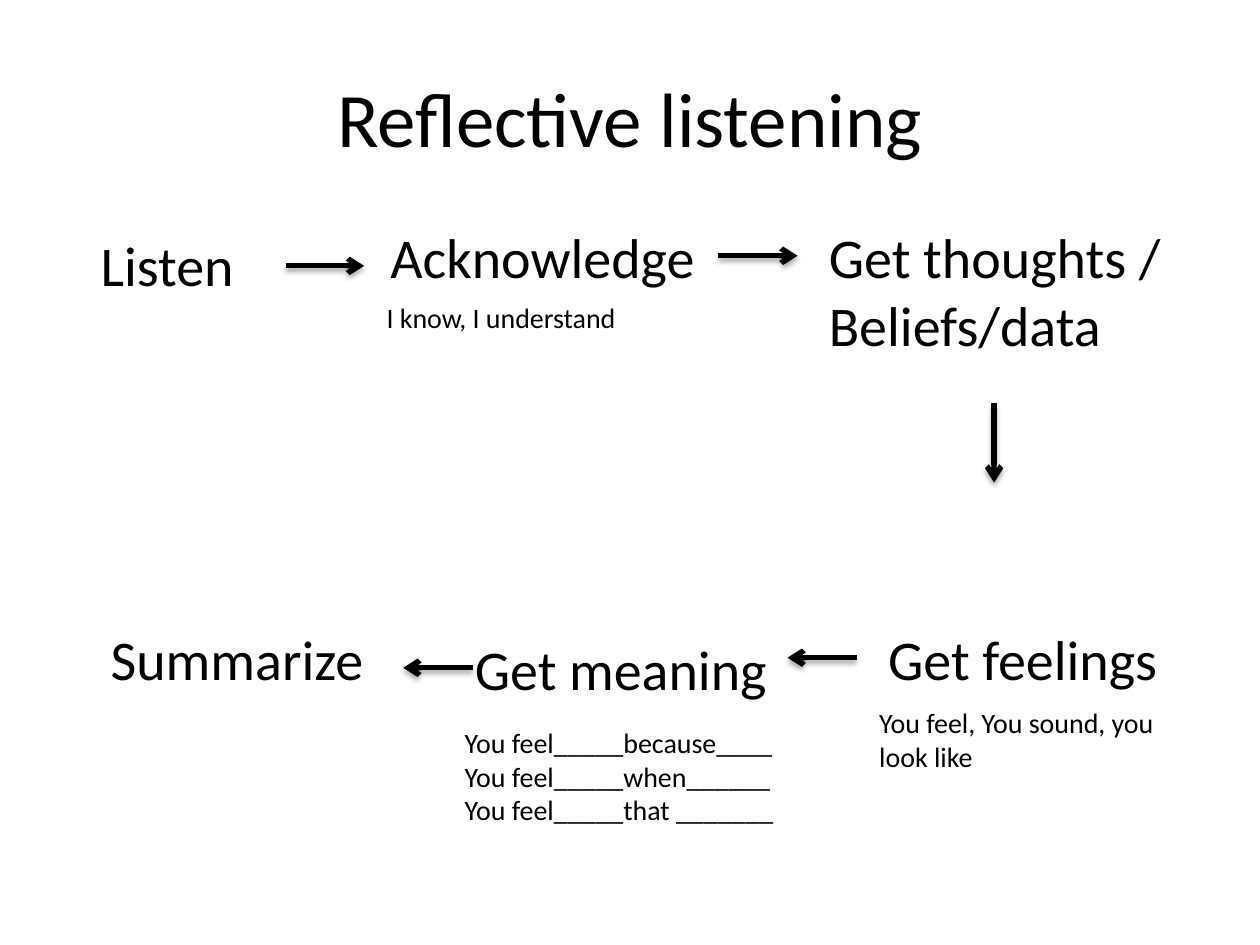
from lxml import etree
from pptx import Presentation
from pptx.dml.color import RGBColor
from pptx.enum.shapes import MSO_CONNECTOR as CONN
from pptx.enum.text import MSO_ANCHOR as ANCHOR, MSO_AUTO_SIZE as AUTO, PP_ALIGN as ALIGN
from pptx.oxml import parse_xml
from pptx.oxml.ns import nsdecls, qn
from pptx.util import Inches, Pt

BLACK = RGBColor(0x00, 0x00, 0x00)
SHADOW = (
    f'<a:effectLst {nsdecls("a")}>'
    '<a:outerShdw blurRad="40000" dist="23000" dir="5400000" rotWithShape="0">'
    f'<a:srgbClr val="{BLACK}"><a:alpha val="35000"/></a:srgbClr>'
    '</a:outerShdw></a:effectLst>'
)


class Deck:
    font = "Calibri"
    color = BLACK
    title_size, step_size, note_size = Pt(44), Pt(32), Pt(16)
    arrow_width = Pt(3)

    def __init__(self, width, height):
        self.prs = Presentation()
        self.prs.slide_width, self.prs.slide_height = Inches(width), Inches(height)
        self.s = self.prs.slides.add_slide(self.prs.slide_layouts[6])

    def text(self, text, box, size, wrap=True, align=ALIGN.LEFT):
        sp = self.s.shapes.add_textbox(*map(Inches, box))
        tf = sp.text_frame
        tf.text = text
        tf.word_wrap = wrap
        for p in tf.paragraphs:
            p.alignment = align
            for r in p.runs:
                r.font.name, r.font.size = self.font, size
                r.font.color.rgb = self.color
        return tf

    def title(self, text, *box):
        tf = self.text(text, box, self.title_size, align=ALIGN.CENTER)
        tf.vertical_anchor = ANCHOR.MIDDLE

    def step(self, text, *box):
        self.text(text, box, self.step_size, wrap=False).auto_size = AUTO.SHAPE_TO_FIT_TEXT

    def note(self, text, *box):
        self.text(text, box, self.note_size).auto_size = AUTO.SHAPE_TO_FIT_TEXT

    def arrow(self, *ends):
        c = self.s.shapes.add_connector(CONN.STRAIGHT, *map(Inches, ends))
        c.line.color.rgb, c.line.width = self.color, self.arrow_width
        etree.SubElement(c.line._get_or_add_ln(), qn("a:tailEnd"), type="arrow")
        c._element.spPr.append(parse_xml(SHADOW))


def main():
    d = Deck(10, 7.5)
    d.title("Reflective listening", 0.5, 0.3, 9, 1.25)

    # Steps, clockwise from the top left
    d.step("Listen", 0.7, 1.78, 1.37, 0.64)
    d.step("Acknowledge", 3, 1.72, 2.74, 0.64)
    d.step("Get thoughts /\nBeliefs/data", 6.48, 1.72, 2.97, 1.18)
    d.step("Get feelings", 6.95, 4.91, 2.36, 0.64)
    d.step("Get meaning", 3.67, 4.99, 2.55, 0.64)
    d.step("Summarize", 0.78, 4.91, 2.33, 0.64)

    # Arrows between the steps
    d.arrow(2.27, 2.11, 2.89, 2.11)
    d.arrow(5.7, 2.03, 6.33, 2.03)
    d.arrow(7.89, 3.2, 7.89, 3.83)
    d.arrow(6.8, 5.22, 6.25, 5.22)
    d.arrow(3.75, 5.3, 3.2, 5.3)

    # Example phrases under the steps
    d.note("I know, I understand", 2.97, 2.34, 2.73, 0.37)
    d.note("You feel, You sound, you look like", 6.88, 5.55, 2.73, 0.64)
    d.note("You feel_____because____\nYou feel_____when______\nYou feel_____that _______",
           3.59, 5.71, 2.73, 0.91)

    d.prs.save("out.pptx")


if __name__ == "__main__":
    main()
